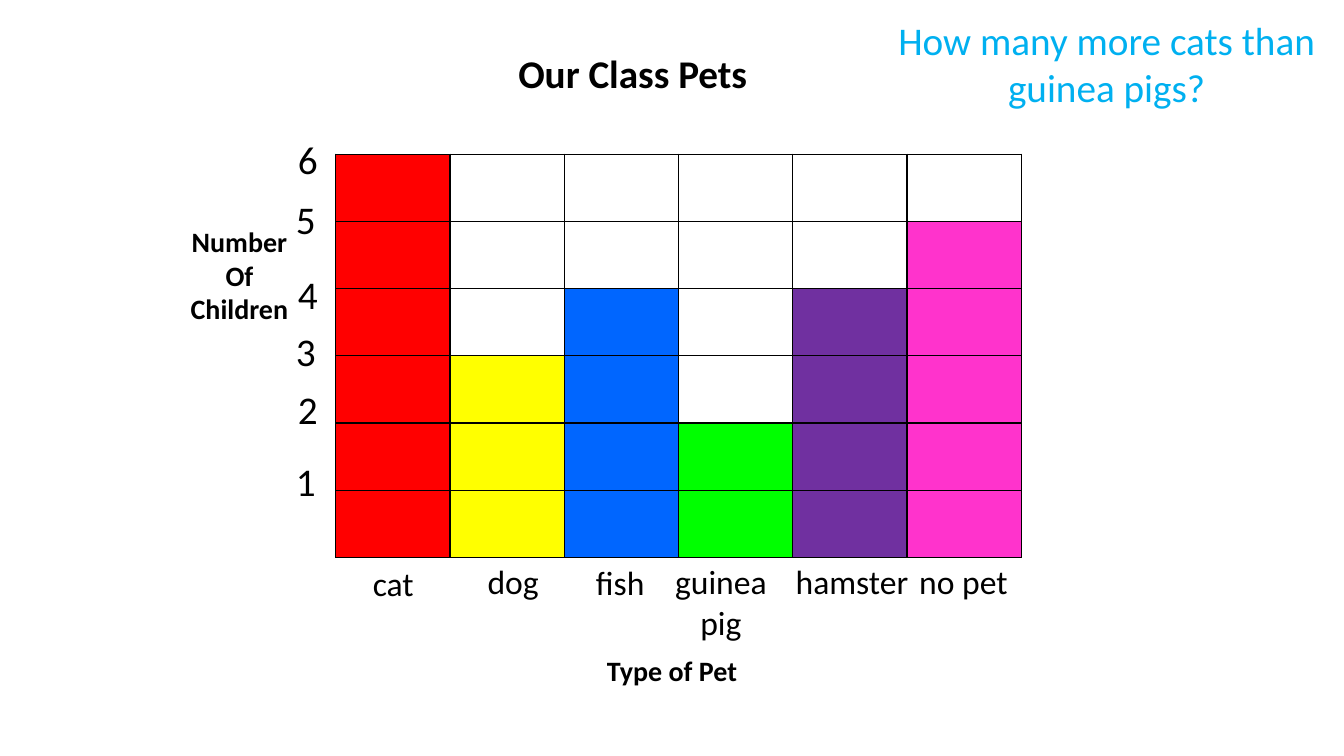
from lxml.etree import SubElement
from pptx import Presentation
from pptx.dml.color import RGBColor
from pptx.enum.text import MSO_AUTO_SIZE as AutoSize, PP_ALIGN as Align
from pptx.oxml.ns import qn
from pptx.util import Pt

PX = 9144
BLACK = "000000"


def color(value):
    return RGBColor.from_string(value)


def add_text(text, left, top, width, height, size=24, bold=False, ink=BLACK,
             align=Align.CENTER, wrap=True):
    box = page.shapes.add_textbox(left * PX, top * PX, width * PX, height * PX)
    frame = box.text_frame
    frame.word_wrap = wrap
    frame.auto_size = AutoSize.SHAPE_TO_FIT_TEXT
    frame.text = text
    for para in frame.paragraphs:
        para.alignment = align
        font = para.runs[0].font
        font.name = "Calibri"
        font.size = Pt(size)
        font.bold = bold
        font.color.rgb = color(ink)


deck = Presentation()
deck.slide_width, deck.slide_height = 1333 * PX, 750 * PX
page = deck.slides.add_slide(deck.slide_layouts[6])

pets = [
    ("cat", 6, "FF0000", 339, 554, 102, 50),
    ("dog", 3, "FFFF00", 458, 552, 102, 50),
    ("fish", 4, "0066FF", 564, 553, 102, 50),
    ("guinea\npig", 2, "00FF00", 651, 552, 128, 91),
    ("hamster", 4, "7030A0", 779, 552, 132, 50),
    ("no pet", 5, "FF33CC", 901, 552, 109, 50),
]
top_count = 6

grid = page.shapes.add_table(top_count, len(pets), 333 * PX, 153 * PX,
                             680 * PX, 400 * PX).table
grid.first_row = False
grid.horz_banding = False

for column, (name, count, fill, left, top, width, height) in enumerate(pets):
    for row in range(top_count):
        cell = grid.cell(row, column)
        props = cell._tc.get_or_add_tcPr()
        for side in ("lnL", "lnR", "lnT", "lnB"):
            line = SubElement(props, qn(f"a:{side}"), w=str(Pt(1)))
            solid = SubElement(line, qn("a:solidFill"))
            SubElement(solid, qn("a:srgbClr"), val=BLACK)
        if row >= top_count - count:
            cell.fill.solid()
            cell.fill.fore_color.rgb = color(fill)
        else:
            cell.fill.background()
    add_text(name, left, top, width, height, wrap=name != "no pet")

for number, top in enumerate((449, 377, 320, 263, 189, 129), start=1):
    left = 272 if number % 2 else 274
    add_text(str(number), left, top, 51, 57, size=28, align=Align.RIGHT)

add_text("Our Class Pets", 360, 44, 535, 57, size=28, bold=True)
add_text("Type of Pet", 399, 643, 535, 44, size=20, bold=True)
add_text("Number\nOf\nChildren", 178, 218, 119, 111, size=20, bold=True)
add_text("How many more cats than guinea pigs?", 862, 11, 471, 104,
         size=28, ink="00B0F0")

deck.save("out.pptx")
